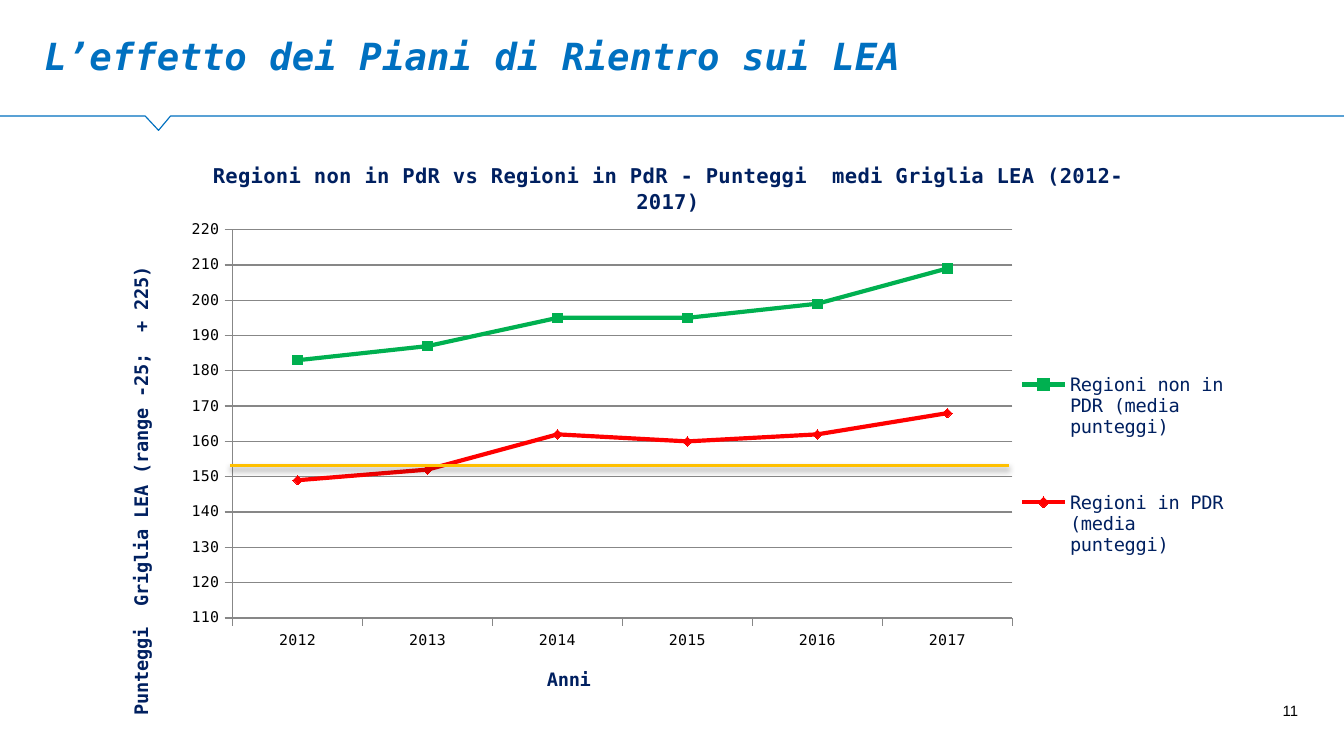
from lxml import etree
from pptx import Presentation
from pptx.chart.data import CategoryChartData
from pptx.dml.color import RGBColor
from pptx.enum.chart import XL_CHART_TYPE, XL_LEGEND_POSITION, XL_MARKER_STYLE, XL_TICK_MARK
from pptx.enum.shapes import MSO_CONNECTOR
from pptx.enum.text import MSO_ANCHOR, PP_ALIGN
from pptx.oxml import parse_xml
from pptx.oxml.ns import nsdecls, qn
from pptx.util import Inches, Pt

LINES = XL_CHART_TYPE.LINE_MARKERS
RIGHT = XL_LEGEND_POSITION.RIGHT
SQUARE, DIAMOND = XL_MARKER_STYLE.SQUARE, XL_MARKER_STYLE.DIAMOND
OUT = XL_TICK_MARK.OUTSIDE
STRAIGHT = MSO_CONNECTOR.STRAIGHT
BOTTOM, MIDDLE = MSO_ANCHOR.BOTTOM, MSO_ANCHOR.MIDDLE
LEFT, END = PP_ALIGN.LEFT, PP_ALIGN.RIGHT

MONO, SANS = "DejaVu Sans Mono", "Arial"
BLUE, NAVY, BLACK, GREY = "0070C0", "002060", "000000", "878787"
GREEN, RED, GOLD = "00B050", "FF0000", "FFC000"
YEARS = ["2012", "2013", "2014", "2015", "2016", "2017"]
SERIES = [
    ("Regioni non in PDR (media punteggi)", GREEN, SQUARE, (183, 187, 195, 195, 199, 209)),
    ("Regioni in PDR (media punteggi)", RED, DIAMOND, (149, 152, 162, 160, 162, 168)),
]


def tint(code):
    """Turn a hex string into a colour."""
    return RGBColor.from_string(code)


def units(*cells):
    """Turn grid cells of a tenth of an inch into lengths."""
    return [Inches(cell / 10) for cell in cells]


def pin(node, slot, inner=False, **share):
    """Fix the place of a chart part in percent of the chart."""
    for old in node.findall(qn("c:layout")):
        node.remove(old)
    layout = parse_xml(f"<c:layout {nsdecls('c')}/>")
    manual = etree.SubElement(layout, qn("c:manualLayout"))
    rows = [("layoutTarget", "inner")] if inner else []
    rows += [("xMode", "edge"), ("yMode", "edge")]
    rows += [(side, f"{val / 100:.3f}") for side, val in share.items()]
    for tag, val in rows:
        etree.SubElement(manual, qn(f"c:{tag}")).set("val", val)
    node.insert(slot, layout)


class Deck:
    """Holds the style and the current slide."""

    def __init__(self):
        """Open a title-only slide."""
        self.show = Presentation()
        self.show.slide_width, self.show.slide_height = units(100, 56.25)
        self.slide = self.show.slides.add_slide(self.show.slide_layouts[5])
        self.shapes = self.slide.shapes

    def font(self, font, size, code, face=MONO, bold=False, slant=False):
        """Style a font."""
        font.size, font.name, font.bold, font.italic = Pt(size), face, bold, slant
        font.color.rgb = tint(code)

    def fill(self, shape, text, box, side, anchor, *style):
        """Place a shape and write its single run."""
        shape.left, shape.top, shape.width, shape.height = units(*box)
        frame = shape.text_frame
        frame.word_wrap, frame.vertical_anchor = True, anchor
        frame.margin_left = frame.margin_top = frame.margin_right = frame.margin_bottom = 0
        para = frame.paragraphs[0]
        para.alignment = side
        run = para.add_run()
        run.text = text
        self.font(run.font, *style)

    def title(self, text, box):
        """Write the slide title."""
        self.fill(self.shapes.title, text, box, LEFT, BOTTOM, 20, BLUE, MONO, True, True)

    def text(self, text, box, side, *style):
        """Add a text box."""
        self.fill(self.shapes.add_textbox(0, 0, 0, 0), text, box, side, MIDDLE, *style)

    def rule(self, points):
        """Draw the open outline under the title."""
        start, *rest = [units(*point) for point in points]
        pen = self.shapes.build_freeform(*start)
        pen.add_line_segments(rest, close=False)
        shape = pen.convert_to_shape()
        shape.shadow.inherit = False
        shape.fill.background()
        shape.line.color.rgb, shape.line.width = tint(BLUE), Pt(0.63)

    def line(self, start, end, code, width):
        """Draw a straight line with a soft shadow."""
        line = self.shapes.add_connector(STRAIGHT, *units(*start, *end))
        line.line.color.rgb, line.line.width = tint(code), Pt(width)
        line._element.spPr.append(parse_xml(
            f'<a:effectLst {nsdecls("a")}><a:outerShdw blurRad="40000" dist="23000" '
            'dir="5400000" rotWithShape="0"><a:srgbClr val="000000">'
            '<a:alpha val="35000"/></a:srgbClr></a:outerShdw></a:effectLst>'))

    def head(self, owner, text, size):
        """Write the title of a chart or an axis."""
        run = owner.text_frame.paragraphs[0].add_run()
        run.text = text
        self.font(run.font, size, NAVY, bold=True)

    def axis(self, axis, text, **place):
        """Style an axis and place its title."""
        self.head(axis.axis_title, text, 10)
        pin(axis.axis_title._element, 1, **place)
        axis.major_tick_mark = OUT
        axis.format.line.color.rgb = tint(GREY)
        self.font(axis.tick_labels.font, 8, BLACK)

    def chart(self, box, title):
        """Add the line chart."""
        data = CategoryChartData(number_format="0")
        data.categories = YEARS
        for name, _, _, vals in SERIES:
            data.add_series(name, vals)
        chart = self.shapes.add_chart(LINES, *units(*box), data).chart
        self.font(chart.font, 10, BLACK)
        chart.has_title = chart.has_legend = True
        self.head(chart.chart_title, title, 11)
        self.axis(chart.category_axis, "Anni", x=39.3, y=91)
        scale = chart.value_axis
        self.axis(scale, "Punteggi  Griglia LEA (range -25;  + 225)", x=3.4, y=21.8)
        scale.minimum_scale, scale.maximum_scale, scale.major_unit = 110, 220, 10
        scale.has_major_gridlines = True
        scale.major_gridlines.format.line.color.rgb = tint(GREY)
        scale.tick_labels.number_format = "0"
        scale.tick_labels.number_format_is_linked = False
        legend = chart.legend
        legend.position, legend.include_in_layout = RIGHT, False
        self.font(legend.font, 10, NAVY)
        pin(legend._element, 1, x=79.6, y=31.3, w=19, h=50.5)
        pin(chart._chartSpace.chart.plotArea, 0, True, x=12.6, y=15.6, w=67, h=67.4)
        chart.plots[0].vary_by_categories = False
        for series, (_, code, mark, _) in zip(chart.plots[0].series, SERIES):
            series.smooth = False
            series.marker.style, series.marker.size = mark, 5
            face = series.marker.format
            face.fill.solid()
            face.fill.fore_color.rgb = face.line.color.rgb = tint(code)
            series.format.line.color.rgb = tint(code)
            series.format.line.width = Pt(2.25)


def main():
    """Build the slide."""
    deck = Deck()
    deck.rule([(100, 8.63), (12.7, 8.63), (11.8, 9.7), (10.8, 8.63), (0, 8.63)])
    deck.chart((6.4, 10.4, 86.6, 43.1),
               "Regioni non in PdR vs Regioni in PdR - Punteggi  medi Griglia LEA (2012-2017)")
    deck.line((17.1, 34.65), (75.1, 34.65), GOLD, 1.5)
    deck.title("L’effetto dei Piani di Rientro sui LEA", (3.3, 2.4, 93.2, 3.4))
    deck.text("11", (73.3, 52.25, 23.3, 1.3), END, 8, BLACK, SANS)
    deck.show.save("out.pptx")


if __name__ == "__main__":
    main()
